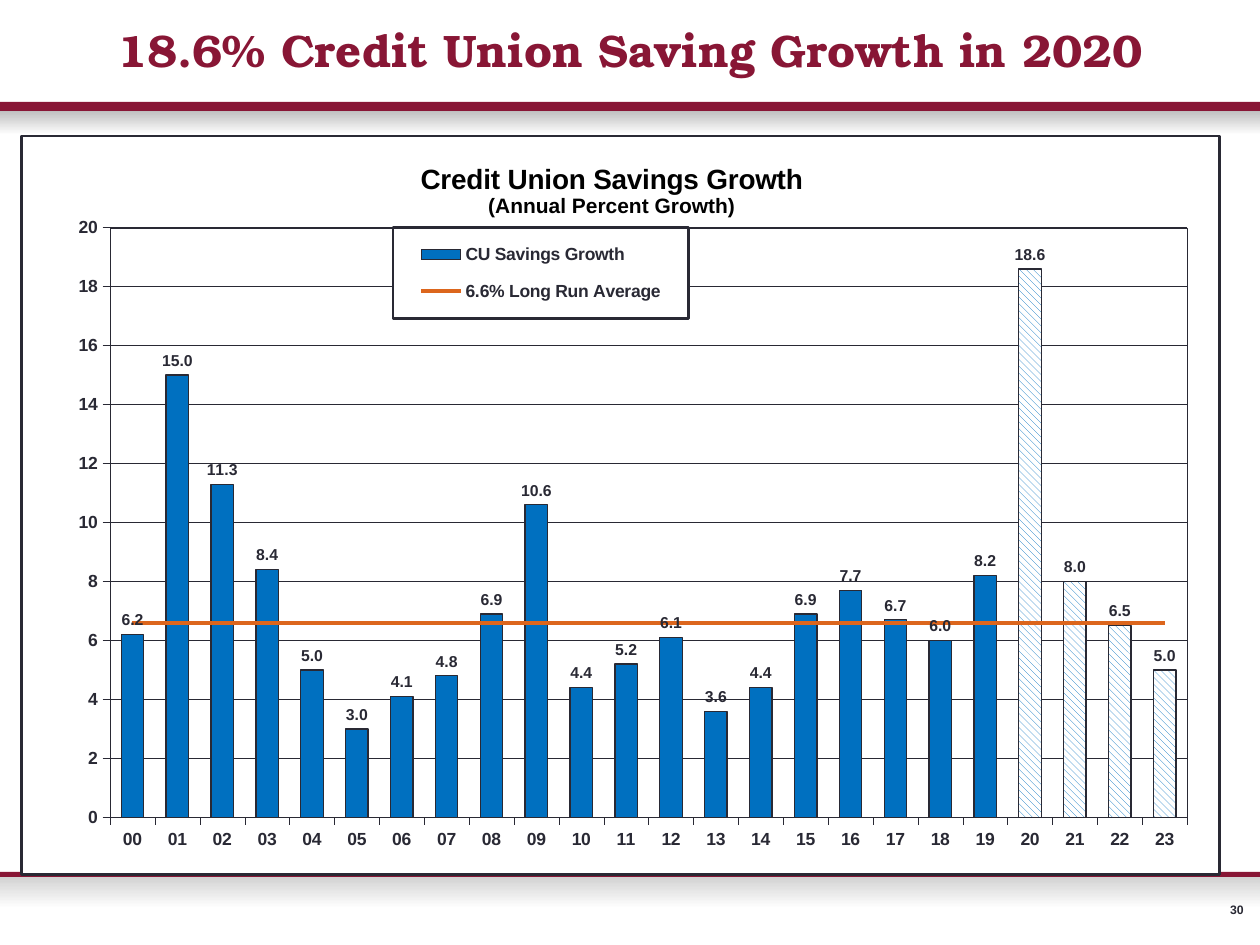
from lxml.etree import SubElement
from pptx import Presentation
from pptx.chart.data import CategoryChartData
from pptx.dml.color import RGBColor
from pptx.enum.chart import XL_CHART_TYPE, XL_LABEL_POSITION, XL_LEGEND_POSITION, XL_TICK_MARK
from pptx.enum.dml import MSO_PATTERN
from pptx.enum.shapes import MSO_SHAPE
from pptx.enum.text import MSO_ANCHOR, PP_ALIGN
from pptx.oxml import parse_xml
from pptx.oxml.ns import nsdecls, qn
from pptx.util import Inches, Pt

MAROON, INK, BLUE, ORANGE, WHITE = "881635", "292934", "0070C0", "DC661D", "FFFFFF"
TITLE = "18.6% Credit Union Saving Growth in 2020"
CHART_TITLE = [("Credit Union Savings Growth", 16), ("(Annual Percent Growth)", 12)]
GROWTH = [6.2, 15, 11.3, 8.4, 5, 3, 4.1, 4.8, 6.9, 10.6, 4.4, 5.2,
          6.1, 3.6, 4.4, 6.9, 7.7, 6.7, 6, 8.2, 18.6, 8, 6.5, 5]
YEARS = [f"{year:02d}" for year in range(len(GROWTH))]
AVERAGE = 6.6
FIRST_HATCHED = 20
FADES = [(0.88, 0.19, "C0C0C0"), (6.94, 0.27, "CFCFCF")]
RULES = [(6.92, 0.04), (0.81, 0.07)]


def color(value):
    """Turn a hex string into a colour."""
    return RGBColor.from_string(value)


def style_font(font, size, value=INK, name="Arial"):
    """Make a font bold with the given size, colour and typeface."""
    font.size, font.bold, font.name = Pt(size), True, name
    font.color.rgb = color(value)


def style_line(line, width, value=INK):
    """Give a line its width and colour."""
    line.width = Pt(width)
    line.color.rgb = color(value)


def add_band(page, top, height):
    """Add a borderless rectangle across the whole page."""
    band = page.shapes.add_shape(MSO_SHAPE.RECTANGLE, 0, Inches(top), Inches(10), Inches(height))
    band.shadow.inherit = False
    band.line.fill.background()
    return band


def add_text(page, text, place, align, size, value, name, wrap):
    """Add one line of text in a vertically centred box."""
    box = page.shapes.add_textbox(*map(Inches, place))
    frame = box.text_frame
    frame.text = text
    frame.word_wrap = wrap
    frame.vertical_anchor = MSO_ANCHOR.MIDDLE
    frame.margin_left = frame.margin_right = frame.margin_top = frame.margin_bottom = 0
    para = frame.paragraphs[0]
    para.alignment = align
    style_font(para.runs[0].font, size, value, name)


def manual_layout(*parts, inner=False):
    """Build a chart layout from x, y and optionally width and height."""
    target = '<c:layoutTarget val="inner"/>' if inner else ""
    values = "".join(f'<c:{key} val="{part}"/>' for key, part in zip("xywh", parts))
    return parse_xml(f'<c:layout {nsdecls("c")}><c:manualLayout>{target}<c:xMode val="edge"/>'
                     f'<c:yMode val="edge"/>{values}</c:manualLayout></c:layout>')


def outline(width, fill=f'<a:solidFill><a:srgbClr val="{WHITE}"/></a:solidFill>'):
    """Build filled and outlined shape properties for a chart part."""
    return parse_xml(f'<c:spPr {nsdecls("c", "a")}>{fill}<a:ln w="{Pt(width)}"><a:solidFill>'
                     f'<a:srgbClr val="{INK}"/></a:solidFill></a:ln></c:spPr>')


def move_to_line(chart, series):
    """Move a column series to a line plot on the same axes."""
    bars = chart.plots[0]._element
    element = series._element
    lines = parse_xml(f'<c:lineChart {nsdecls("c")}><c:grouping val="standard"/>'
                      '<c:varyColors val="0"/></c:lineChart>')
    bars.addnext(lines)
    for negative in element.findall(qn("c:invertIfNegative")):
        element.remove(negative)
    element.find(qn("c:spPr")).addnext(
        parse_xml(f'<c:marker {nsdecls("c")}><c:symbol val="none"/></c:marker>'))
    SubElement(element, qn("c:smooth")).set("val", "0")
    lines.append(element)
    SubElement(lines, qn("c:marker")).set("val", "1")
    for axis in bars.findall(qn("c:axId")):
        SubElement(lines, qn("c:axId")).set("val", axis.get("val"))


def style_columns(plot, columns):
    """Format the columns, their labels and the hatched years."""
    plot.gap_width = 100
    plot.vary_by_categories = False
    columns.format.fill.solid()
    columns.format.fill.fore_color.rgb = color(BLUE)
    style_line(columns.format.line, 0.75)
    for index in range(FIRST_HATCHED, len(GROWTH)):
        form = columns.points[index].format
        form.fill.patterned()
        form.fill.pattern = MSO_PATTERN.WIDE_DOWNWARD_DIAGONAL
        form.fill.fore_color.rgb = color(BLUE)
        form.fill.back_color.rgb = color(WHITE)
        style_line(form.line, 0.75)
    labels = columns.data_labels
    labels.show_value = True
    labels.position = XL_LABEL_POSITION.OUTSIDE_END
    labels.number_format, labels.number_format_is_linked = "0.0", False
    style_font(labels.font, 9)


def style_axes(chart):
    """Format both axes and the gridlines."""
    for axis in (chart.category_axis, chart.value_axis):
        axis.major_tick_mark = XL_TICK_MARK.OUTSIDE
        axis.minor_tick_mark = XL_TICK_MARK.NONE
        style_font(axis.tick_labels.font, 10)
        style_line(axis.format.line, 0.18)
    scale = chart.value_axis
    scale.minimum_scale, scale.maximum_scale, scale.major_unit = 0, 20, 2
    scale.tick_labels.number_format, scale.tick_labels.number_format_is_linked = "0", False
    style_line(scale.major_gridlines.format.line, 0.18)


def style_frame(chart):
    """Place the chart title, legend and plot, and draw their borders."""
    frame = chart.chart_title.text_frame
    for index, (text, size) in enumerate(CHART_TITLE):
        para = frame.add_paragraph() if index else frame.paragraphs[0]
        para.text = text
        para.alignment = PP_ALIGN.CENTER
        style_font(para.runs[0].font, size, "000000")
    title = chart.chart_title._element
    for old in title.findall(qn("c:layout")):
        title.remove(old)
    title.find(qn("c:tx")).addnext(manual_layout(0.33, 0.03))
    chart.chart_title.include_in_layout = False

    chart.has_legend = True
    chart.legend.position = XL_LEGEND_POSITION.RIGHT
    chart.legend.include_in_layout = False
    style_font(chart.legend.font, 10)
    legend = chart.legend._element
    for old in legend.findall(qn("c:layout")):
        legend.remove(old)
    legend.find(qn("c:legendPos")).addnext(manual_layout(0.31, 0.124, 0.247, 0.123))
    legend.find(qn("c:overlay")).addnext(outline(1.5))

    root = chart.element
    root.find(qn("c:chart")).addnext(outline(1.5))
    area = root.find(qn("c:chart")).find(qn("c:plotArea"))
    for old in area.findall(qn("c:layout")):
        area.remove(old)
    area.insert(0, manual_layout(0.074, 0.124, 0.899, 0.799, inner=True))
    area.append(outline(0.18, "<a:noFill/>"))


def add_growth_chart(page):
    """Add the savings growth columns with their average line."""
    data = CategoryChartData()
    data.categories = YEARS
    data.add_series("CU Savings Growth", GROWTH)
    data.add_series("6.6% Long Run Average", [AVERAGE] * len(GROWTH))
    place = map(Inches, (0.16, 1.07, 9.53, 5.88))
    chart = page.shapes.add_chart(XL_CHART_TYPE.COLUMN_CLUSTERED, *place, data).chart
    style_font(chart.font, 7.5)
    columns, average = chart.plots[0].series
    style_columns(chart.plots[0], columns)
    style_line(average.format.line, 2.21, ORANGE)
    move_to_line(chart, average)
    style_axes(chart)
    style_frame(chart)


def main():
    """Build and save the deck."""
    deck = Presentation()
    deck.slide_width, deck.slide_height = Inches(10), Inches(7.5)
    page = deck.slides.add_slide(deck.slide_layouts[6])
    for top, height, shade in FADES:
        fill = add_band(page, top, height).fill
        fill.gradient()
        fill.gradient_angle = 270
        for stop, value in zip(fill.gradient_stops, (shade, WHITE)):
            stop.color.rgb = color(value)
    for top, height in RULES:
        fill = add_band(page, top, height).fill
        fill.solid()
        fill.fore_color.rgb = color(MAROON)
    add_text(page, "30", (9.75, 7.16, 0.12, 0.12), PP_ALIGN.RIGHT, 7, INK, "Arial", False)
    add_text(page, TITLE, (0.17, 0.12, 9.67, 0.54), PP_ALIGN.CENTER, 26, MAROON,
             "TeX Gyre Bonum", True)
    add_growth_chart(page)
    deck.save("out.pptx")


if __name__ == "__main__":
    main()
